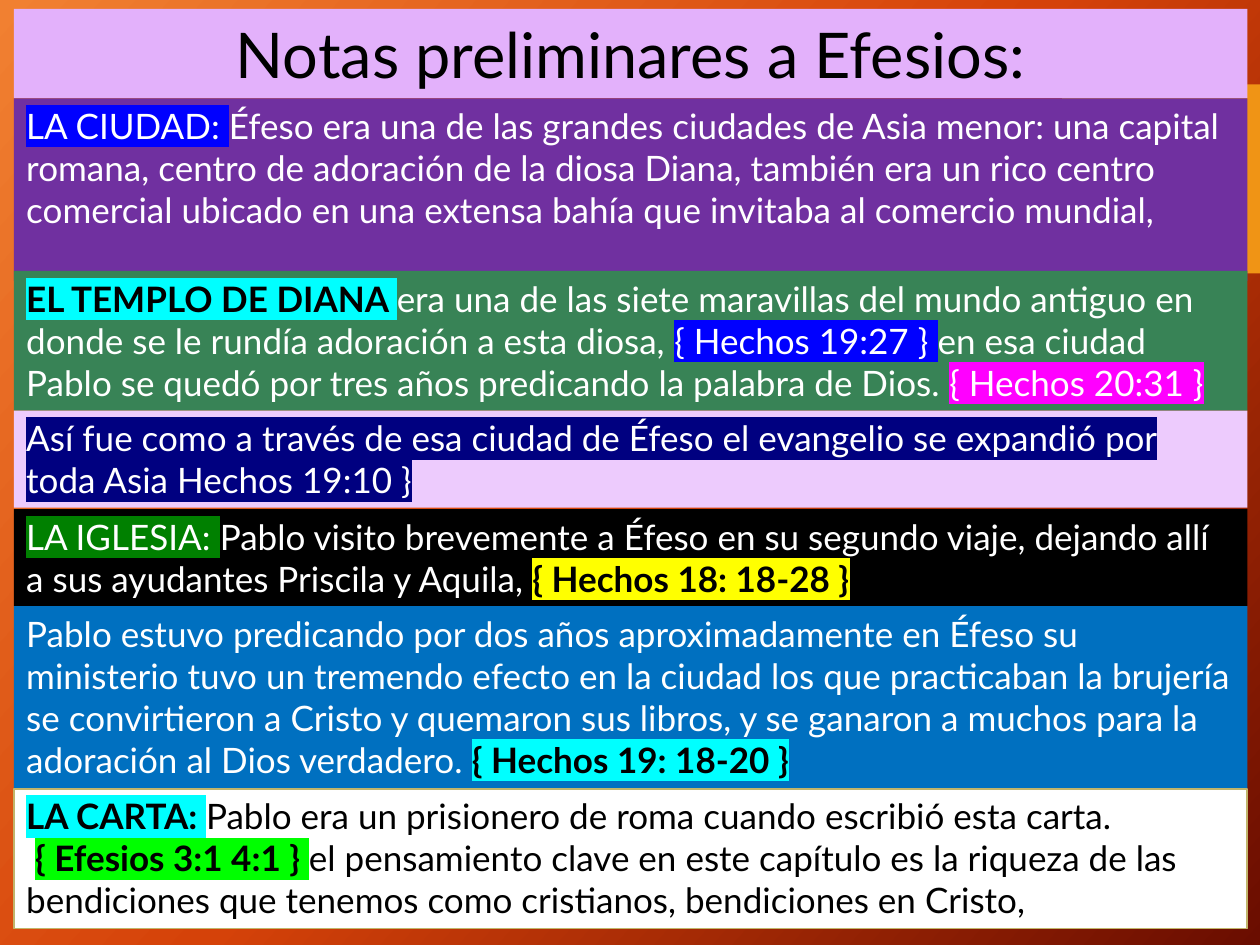
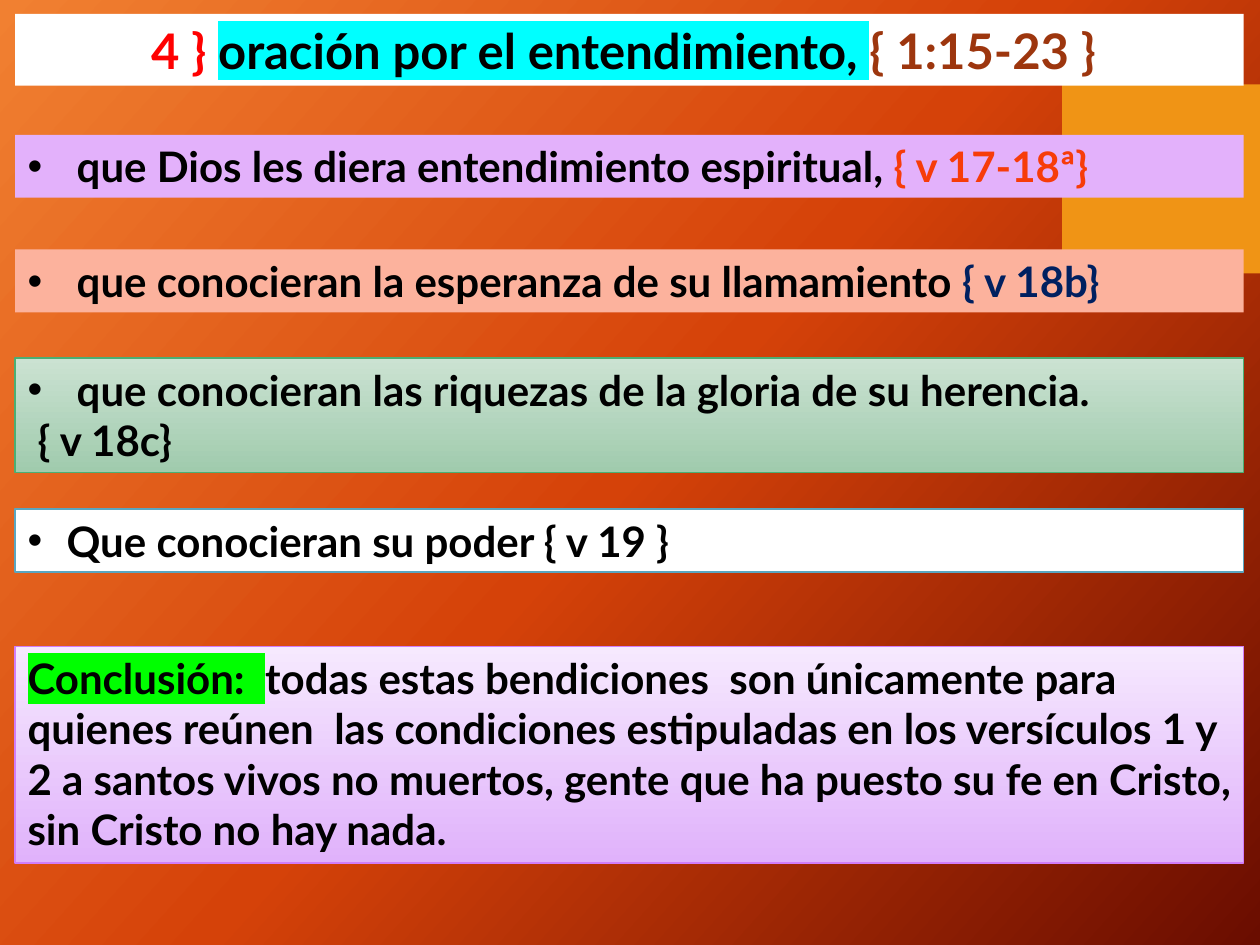
from dataclasses import dataclass

from lxml import etree
from pptx import Presentation
from pptx.dml.color import RGBColor
from pptx.enum.shapes import MSO_SHAPE
from pptx.enum.text import MSO_ANCHOR, PP_ALIGN
from pptx.oxml.ns import qn
from pptx.util import Emu, Pt

RECT = MSO_SHAPE.RECTANGLE
TOP = MSO_ANCHOR.TOP
LEFT, CENTER = PP_ALIGN.LEFT, PP_ALIGN.CENTER
SCALE = 9144  # EMU per px, 100 px to the inch


@dataclass(frozen=True)
class Theme:
    font: str = "Lato"
    head: int = 36
    sub: int = 28
    point: int = 24
    note: int = 20
    back: tuple = ((0, "F18031"), (50, "D54209"), (100, "6A0D00"))
    tilt: int = 42
    tab: str = "F09415"
    black: str = "000000"
    white: str = "FFFFFF"
    lilac: str = "E3B1FB"
    pale: str = "EDCBFD"
    purple: str = "7030A0"
    green: str = "388356"
    blue: str = "0070C0"
    peach: str = "FCB29D"
    mint: tuple = ((0, "CBE2D2"), (100, "A0CBAD"))
    mist: tuple = ((0, "F6E9FE"), (100, "E0B2FB"))
    red: str = "FF0000"
    rust: str = "9D360E"
    flame: str = "F73C09"
    navy: str = "002060"
    gold_line: str = "C1B56B"
    green_line: str = "4BAF73"
    teal_line: str = "5AA6C0"
    lilac_line: str = "D17DF9"
    # text marker colours
    cyan: str = "00FFFF"
    royal: str = "0000FF"
    pink: str = "FF00FF"
    deep: str = "000080"
    leaf: str = "008000"
    yellow: str = "FFFF00"
    lime: str = "00FF00"


T = Theme()


def px(n):
    return Emu(n * SCALE)


def rgb(code):
    return RGBColor.from_string(code)


def blend(fill, node, stops, angle):
    """Give fill, which lives in node, a linear gradient turned clockwise by angle."""
    fill.gradient()
    fill.gradient_angle = 360 - angle
    group = next(node.iter(qn("a:gsLst")))
    for old in list(group):
        group.remove(old)
    for place, code in stops:
        stop = etree.SubElement(group, qn("a:gs"), pos=str(place * 1000))
        etree.SubElement(stop, qn("a:srgbClr"), val=code)


def box(slide, left, top, width, height, fill, line=None):
    """Add a flat rectangle; fill is a colour or gradient stops, line is (colour, points)."""
    shape = slide.shapes.add_shape(RECT, px(left), px(top), px(width), px(height))
    shape.shadow.inherit = False
    if isinstance(fill, str):
        shape.fill.solid()
        shape.fill.fore_color.rgb = rgb(fill)
    else:
        blend(shape.fill, shape._element, fill, 90)
    if line:
        code, weight = line
        shape.line.color.rgb = rgb(code)
        shape.line.width = Pt(weight)
    else:
        shape.line.fill.background()
    return shape


def bullet(para):
    props = para._p.get_or_add_pPr()
    props.set("marL", str(px(31)))
    props.set("indent", str(px(-31)))
    etree.SubElement(props, qn("a:buFont"), typeface="Arial")
    etree.SubElement(props, qn("a:buChar"), char="•")


def span(text, ink=T.black, mark=None, bold=False):
    return text, ink, mark, bold


def bold(text, ink=T.black, mark=None):
    return span(text, ink, mark, True)


def light(text, mark=None):
    return span(text, T.white, mark)


def write(para, spans, size):
    for text, ink, mark, heavy in spans:
        run = para.add_run()
        run.text = text
        form = {"name": T.font, "size": Pt(size), "bold": heavy}
        for name, value in form.items():
            setattr(run.font, name, value)
        run.font.color.rgb = rgb(ink)
        if mark:
            glow = etree.Element(qn("a:highlight"))
            etree.SubElement(glow, qn("a:srgbClr"), val=mark)
            run._r.rPr.find(qn("a:solidFill")).addnext(glow)


def band(slide, frame, fill, paras, size, line=None, align=LEFT, dot=False):
    """Add a filled text band; dot puts a bullet on its first paragraph."""
    text = box(slide, *frame, fill, line).text_frame
    form = {"word_wrap": True, "vertical_anchor": TOP}
    for name, value in form.items():
        setattr(text, name, value)
    for i, spans in enumerate(paras):
        para = text.add_paragraph() if i else text.paragraphs[0]
        para.alignment = align
        if dot and not i:
            bullet(para)
        write(para, spans, size)


def page(deck):
    """Add a slide with the shared backdrop and corner block."""
    slide = deck.slides.add_slide(deck.slide_layouts[6])
    blend(slide.background.fill, slide._element, T.back, T.tilt)
    box(slide, 843, 67, 157, 150, T.tab)
    return slide


def notes(deck):
    slide = page(deck)
    left, width = 11, 979
    band(slide, (left, 7, width, 71), T.lilac,
         [[span("Notas preliminares a Efesios:")]], T.head, align=CENTER)
    rows = [
        (78, 145, T.purple, None, [[
            light("LA CIUDAD: ", T.royal),
            light("Éfeso era una de las grandes ciudades de Asia menor: una capital "
                  "romana, centro de adoración de la diosa Diana, también era un rico "
                  "centro comercial ubicado en una extensa bahía que invitaba al "
                  "comercio mundial,")]]),
        (215, 111, T.green, None, [[
            bold("EL TEMPLO DE DIANA ", mark=T.cyan),
            light("era una de las siete maravillas del mundo antiguo en donde se le "
                  "rundía adoración a esta diosa, "),
            light("{ Hechos 19:27 } ", T.royal),
            light("en esa ciudad Pablo se quedó por tres años predicando la palabra "
                  "de Dios. "),
            light("{ Hechos 20:31 }", T.pink)]]),
        (326, 77, T.pale, None, [[
            light("Así fue como a través de esa ciudad de Éfeso el evangelio se "
                  "expandió por toda Asia Hechos 19:10 }", T.deep)]]),
        (404, 77, T.black, None, [[
            light("LA IGLESIA: ", T.leaf),
            light("Pablo visito brevemente a Éfeso en su segundo viaje, dejando allí "
                  "a sus ayudantes Priscila y Aquila, "),
            bold("{ Hechos 18: 18-28 }", mark=T.yellow)]]),
        (481, 145, T.blue, None, [[
            light("Pablo estuvo predicando por dos años aproximadamente en Éfeso su "
                  "ministerio tuvo un tremendo efecto en la ciudad los que practicaban "
                  "la brujería se convirtieron a Cristo y quemaron sus libros, y se "
                  "ganaron a muchos para la adoración al Dios verdadero. "),
            bold("{ Hechos 19: 18-20 }", mark=T.cyan)]]),
        (626, 111, T.white, (T.gold_line, 1), [
            [bold("LA CARTA: ", mark=T.cyan),
             span("Pablo era un prisionero de roma cuando escribió esta carta.")],
            [span(" "),
             bold("{ Efesios 3:1 4:1 } ", mark=T.lime),
             span("el pensamiento clave en este capítulo es la riqueza de las "
                  "bendiciones que tenemos como cristianos, bendiciones en Cristo,")]]),
    ]
    for top, height, fill, line, paras in rows:
        band(slide, (left, top, width, height), fill, paras, T.note, line)


def prayer(deck):
    slide = page(deck)
    left, width = 12, 975
    band(slide, (left, 11, width, 57), T.white, [[
        bold("4 } ", T.red),
        bold("oración por el entendimiento, ", mark=T.cyan),
        bold("{ 1:15-23 } ", T.rust)]], T.sub, align=CENTER)
    points = [
        (107, 50, T.lilac, None, [[
            bold(" que Dios les diera entendimiento espiritual, "),
            bold("{ v 17-18ª}", T.flame)]]),
        (198, 50, T.peach, None, [[
            bold(" que conocieran la esperanza de su llamamiento "),
            bold("{ v 18b}", T.navy)]]),
        (284, 91, T.mint, (T.green_line, 0.75), [
            [bold(" que conocieran las riquezas de la gloria de su herencia.")],
            [bold(" { v 18c}")]]),
        (404, 50, T.white, (T.teal_line, 1), [[
            bold("Que conocieran su poder { v 19 }")]]),
    ]
    for top, height, fill, line, paras in points:
        band(slide, (left, top, width, height), fill, paras, T.point, line, dot=True)
    band(slide, (left, 513, width, 172), T.mist, [[
        bold("Conclusión:  ", mark=T.lime),
        bold("todas estas bendiciones  son únicamente para quienes reúnen  las "
             "condiciones estipuladas en los versículos 1 y 2 a santos vivos no "
             "muertos, gente que ha puesto su fe en Cristo, sin Cristo no hay nada.")
    ]], T.point, (T.lilac_line, 0.75))


def main():
    deck = Presentation()
    deck.slide_width, deck.slide_height = px(1000), px(750)
    notes(deck)
    prayer(deck)
    deck.save("out.pptx")


if __name__ == "__main__":
    main()
